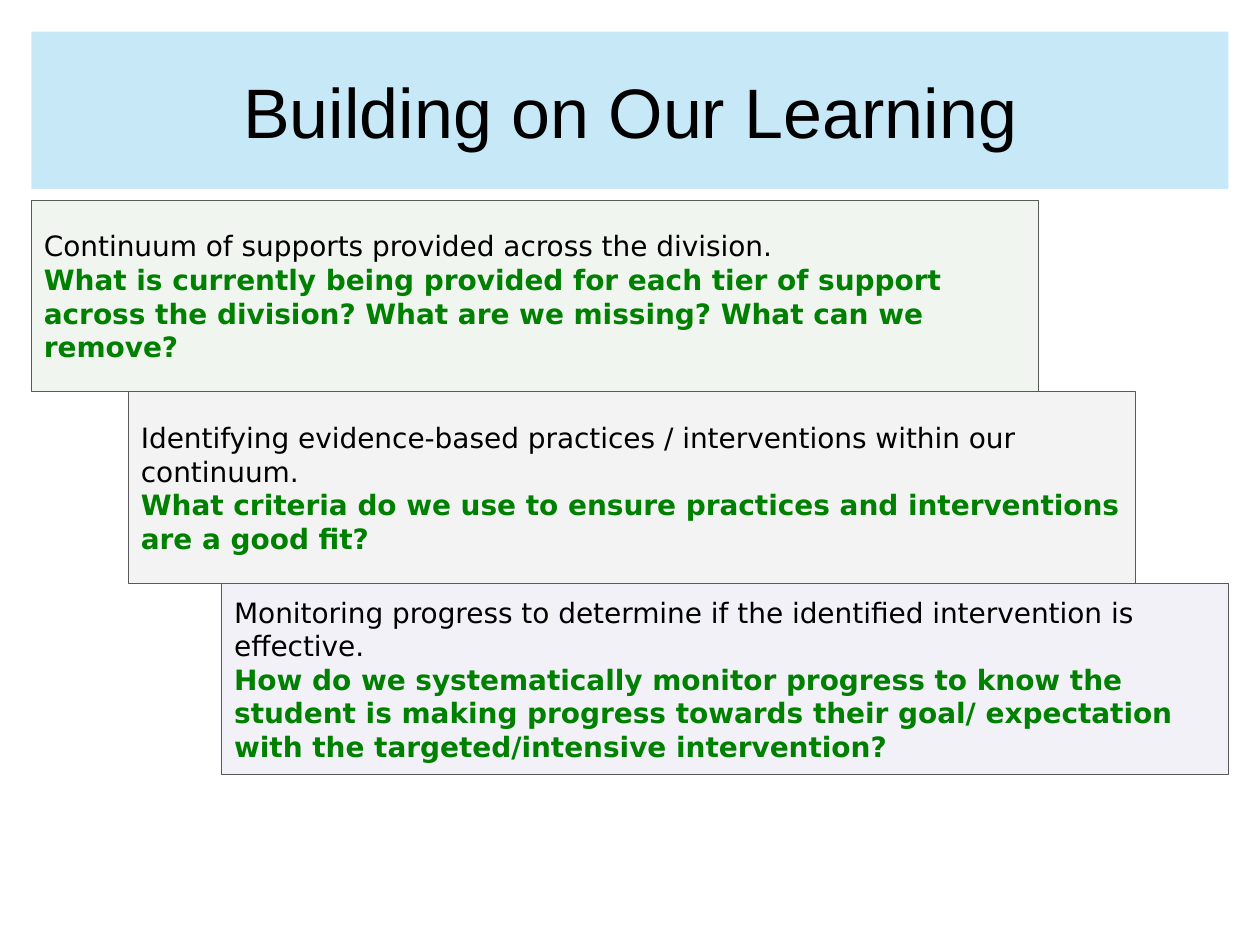
from dataclasses import dataclass

from lxml.etree import SubElement
from pptx import Presentation
from pptx.dml.color import RGBColor
from pptx.enum.shapes import MSO_SHAPE
from pptx.enum.text import MSO_ANCHOR, PP_ALIGN
from pptx.oxml.ns import qn
from pptx.util import Inches, Pt

COLORS = {
    "title": "A9DCF2", "green": "38761D", "grey": "F3F3F3", "purple": "674EA7",
    "border": "595959", "text": "000000", "question": "008000",
}
WIDTH, HEIGHT = 10, 7.5
MARGIN = WIDTH * 0.025
STEP_TOP, STEP_WIDTH, STEP_HEIGHT = 1.59, 7.99, 1.52


@dataclass
class Step:
    left: float
    color: str
    opacity: int
    topic: str
    question: str


STEPS = [
    Step(MARGIN, "green", 7,
         "Continuum of supports provided across the division.",
         "What is currently being provided for each tier of support across the "
         "division? What are we missing? What can we remove?"),
    Step(1.02, "grey", 100,
         "Identifying evidence-based practices / interventions within our continuum.",
         "What criteria do we use to ensure practices and interventions are a good fit?"),
    Step(WIDTH - MARGIN - STEP_WIDTH, "purple", 8,
         "Monitoring progress to determine if the identified intervention is effective.",
         "How do we systematically monitor progress to know the student is making "
         "progress towards their goal/ expectation with the targeted/intensive "
         "intervention?"),
]


def rgb(name: str) -> RGBColor:
    return RGBColor.from_string(COLORS[name])


def add_box(s, left: float, top: float, width: float, height: float,
            color: str, opacity: int = 100, border: bool = True,
            inset: float = 0.1):
    """Draw a filled rectangle and return its text frame."""
    sp = s.shapes.add_shape(MSO_SHAPE.RECTANGLE, Inches(left), Inches(top),
                            Inches(width), Inches(height))
    sp.shadow.inherit = False
    sp.fill.solid()
    sp.fill.fore_color.rgb = rgb(color)
    if opacity < 100:
        clr = sp._element.spPr.find(qn("a:solidFill")).find(qn("a:srgbClr"))
        SubElement(clr, qn("a:alpha")).set("val", str(opacity * 1000))
    if border:
        sp.line.color.rgb = rgb("border")
        sp.line.width = Pt(0.75)
    else:
        sp.line.fill.background()
    tf = sp.text_frame
    tf.word_wrap = True
    tf.vertical_anchor = MSO_ANCHOR.MIDDLE
    tf.margin_left = tf.margin_right = Inches(0.1)
    tf.margin_top = tf.margin_bottom = Inches(inset)
    return tf


def write(p, text: str, *, size: int = 16, font: str = "DejaVu Sans",
          color: str = "text", bold: bool = False,
          align: PP_ALIGN = PP_ALIGN.LEFT) -> None:
    p.alignment = align
    r = p.add_run()
    r.text = text
    r.font.size = Pt(size)
    r.font.name = font
    r.font.bold = bold
    r.font.color.rgb = rgb(color)


def add_step(s, row: int, step: Step) -> None:
    tf = add_box(s, step.left, STEP_TOP + row * STEP_HEIGHT, STEP_WIDTH,
                 STEP_HEIGHT, step.color, step.opacity)
    write(tf.paragraphs[0], step.topic)
    write(tf.add_paragraph(), step.question, color="question", bold=True)


def main() -> None:
    prs = Presentation()
    prs.slide_width, prs.slide_height = Inches(WIDTH), Inches(HEIGHT)
    s = prs.slides.add_slide(prs.slide_layouts[6])

    # Title band
    tf = add_box(s, MARGIN, MARGIN, WIDTH - 2 * MARGIN, HEIGHT / 6, "title",
                 opacity=65, border=False, inset=0.05)
    write(tf.paragraphs[0], "Building on Our Learning", size=40, font="Arial",
          align=PP_ALIGN.CENTER)

    # Staircase of steps
    for row, step in enumerate(STEPS):
        add_step(s, row, step)

    prs.save("out.pptx")


if __name__ == "__main__":
    main()
